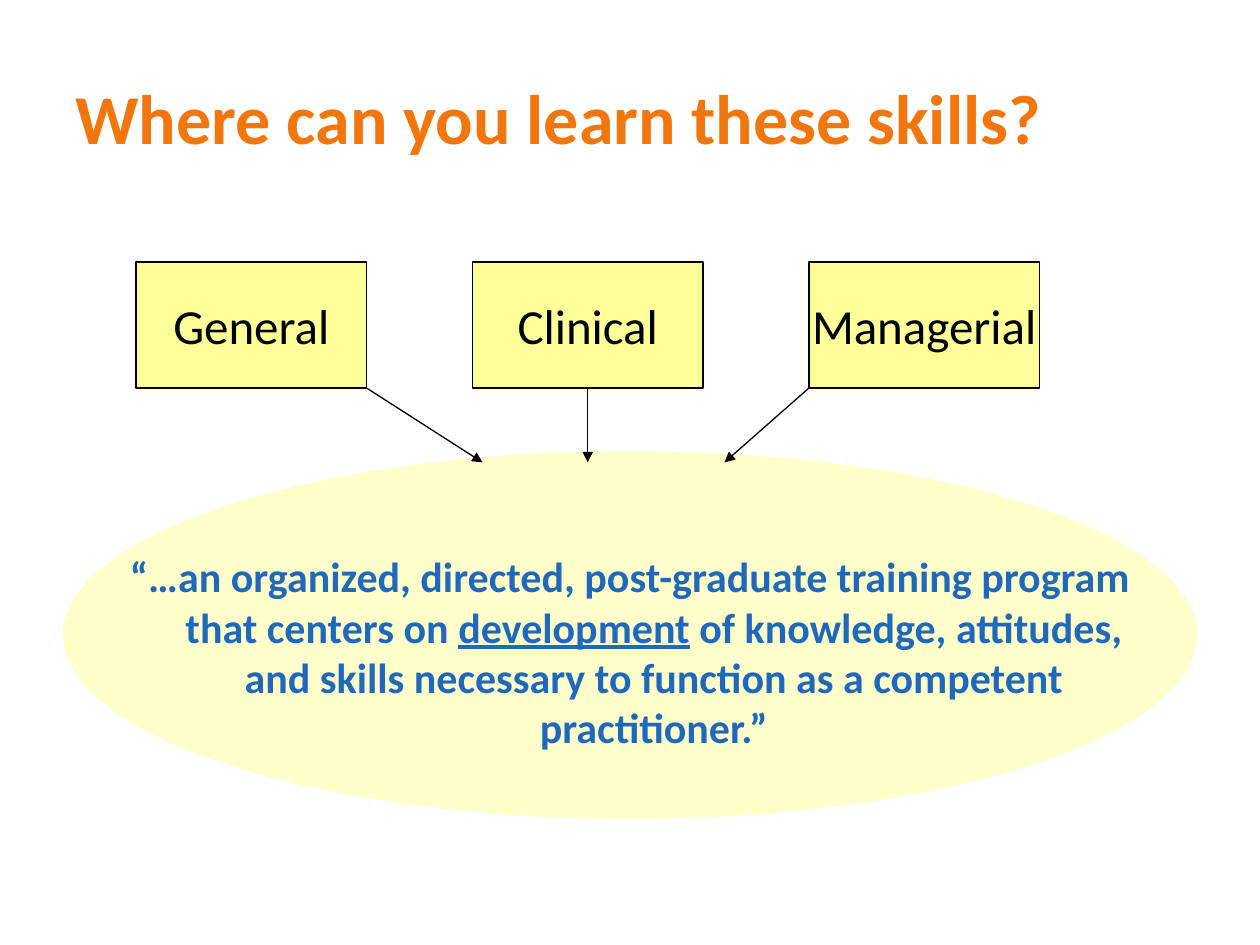
from dataclasses import dataclass

from lxml.etree import SubElement
from pptx import Presentation
from pptx.dml.color import RGBColor as RGB
from pptx.enum.shapes import MSO_CONNECTOR as Connector, MSO_SHAPE as Shape
from pptx.enum.text import MSO_ANCHOR as Anchor, MSO_AUTO_SIZE as AutoSize, PP_ALIGN as Align
from pptx.oxml.ns import qn
from pptx.util import Inches, Pt


@dataclass(frozen=True)
class Theme:
    font: str = "Calibri"
    title: RGB = RGB(0xF2, 0x76, 0x0E)
    quote: RGB = RGB(0x20, 0x68, 0xBA)
    ink: RGB = RGB(0, 0, 0)
    box: RGB = RGB(0xFF, 0xFF, 0x99)
    ellipse: RGB = RGB(0xFF, 0xFF, 0xCC)
    title_size: Pt = Pt(40)
    label_size: Pt = Pt(28)
    quote_size: Pt = Pt(24)
    line_width: Pt = Pt(0.75)


THEME = Theme()
BOX_WIDTH, BOX_HEIGHT, BOX_PITCH = 1.83, 1, 2.67


def place(shape, left, top, width, height):
    shape.left, shape.top = Inches(left), Inches(top)
    shape.width, shape.height = Inches(width), Inches(height)


def write_text(shape, pieces, *, size, color, bold=False, align=Align.LEFT,
               anchor=Anchor.MIDDLE, wrap=True, hanging=0):
    """Fill the shape with one paragraph of (text, underlined) pieces."""
    frame = shape.text_frame
    frame.auto_size = AutoSize.NONE
    frame.word_wrap = wrap
    frame.vertical_anchor = anchor
    paragraph = frame.paragraphs[0]
    properties = paragraph._p.get_or_add_pPr()
    properties.set("marL", str(Inches(hanging)))
    properties.set("indent", str(-Inches(hanging)))
    SubElement(properties, qn("a:buNone"))
    paragraph.alignment = align
    paragraph.space_before = Pt(0)
    for text, underlined in pieces:
        run = paragraph.add_run()
        run.text = text
        font = run.font
        font.name, font.size, font.bold = THEME.font, size, bold
        font.underline = underlined
        font.color.rgb = color


def add_filled_shape(slide, kind, box, fill):
    shape = slide.shapes.add_shape(kind, *map(Inches, box))
    shape.shadow.inherit = False
    shape.fill.solid()
    shape.fill.fore_color.rgb = fill
    shape.line.fill.background()
    return shape


def add_arrow(slide, start, end):
    arrow = slide.shapes.add_connector(Connector.STRAIGHT, *map(Inches, (*start, *end)))
    arrow.line.color.rgb = THEME.ink
    arrow.line.width = THEME.line_width
    SubElement(arrow.line._get_or_add_ln(), qn("a:tailEnd"), type="triangle")
    SubElement(arrow._element.spPr, qn("a:effectLst"))
    return arrow


def add_title(slide, left, top, width, height):
    title = slide.shapes.title
    place(title, left, top, width, height)
    write_text(title, [("Where can you learn these skills?", False)],
               size=THEME.title_size, color=THEME.title, bold=True)


def add_quote(slide, left, top, width, height):
    ellipse = add_filled_shape(slide, Shape.OVAL, (left, top, width, height), THEME.ellipse)
    slide.shapes._spTree.insert(2, ellipse._element)  # behind the placeholders
    body = slide.placeholders[1]
    place(body, left + 0.25, top + 0.74, width - 0.5, height - 0.5)
    pieces = [
        ("“…an organized, directed, post-graduate training program that centers on ", False),
        ("development", True),
        (" of knowledge, attitudes, and skills necessary to function as a competent "
         "practitioner.”", False),
    ]
    write_text(body, pieces, size=THEME.quote_size, color=THEME.quote, bold=True,
               align=Align.CENTER, anchor=Anchor.TOP, hanging=0.38)


def add_skill_boxes(slide, left, top):
    """Add the row of boxes, each with an arrow down to the quote."""
    bottom = top + BOX_HEIGHT
    # name, arrow start and arrow end measured from the box's left edge
    skills = [("General", BOX_WIDTH, 2.75),
              ("Clinical", BOX_WIDTH / 2, BOX_WIDTH / 2),
              ("Managerial", 0, -0.67)]
    for column, (name, start, end) in enumerate(skills):
        x = left + column * BOX_PITCH
        box = add_filled_shape(slide, Shape.RECTANGLE, (x, top, BOX_WIDTH, BOX_HEIGHT), THEME.box)
        box.line.color.rgb = THEME.ink
        box.line.width = THEME.line_width
        write_text(box, [(name, False)], size=THEME.label_size, color=THEME.ink,
                   align=Align.CENTER, wrap=False)
        arrow = add_arrow(slide, (x + start, bottom), (x + end, bottom + 0.59))
        if start == BOX_WIDTH / 2:
            arrow.begin_connect(box, 2)


def main():
    presentation = Presentation()
    presentation.slide_width, presentation.slide_height = Inches(10), Inches(7.5)
    slide = presentation.slides.add_slide(presentation.slide_layouts[1])
    add_title(slide, 0.5, 0.3, 9, 1.25)
    add_quote(slide, 0.5, 3.58, 9, 2.92)
    add_skill_boxes(slide, 1.08, 2.08)
    presentation.save("out.pptx")


if __name__ == "__main__":
    main()
